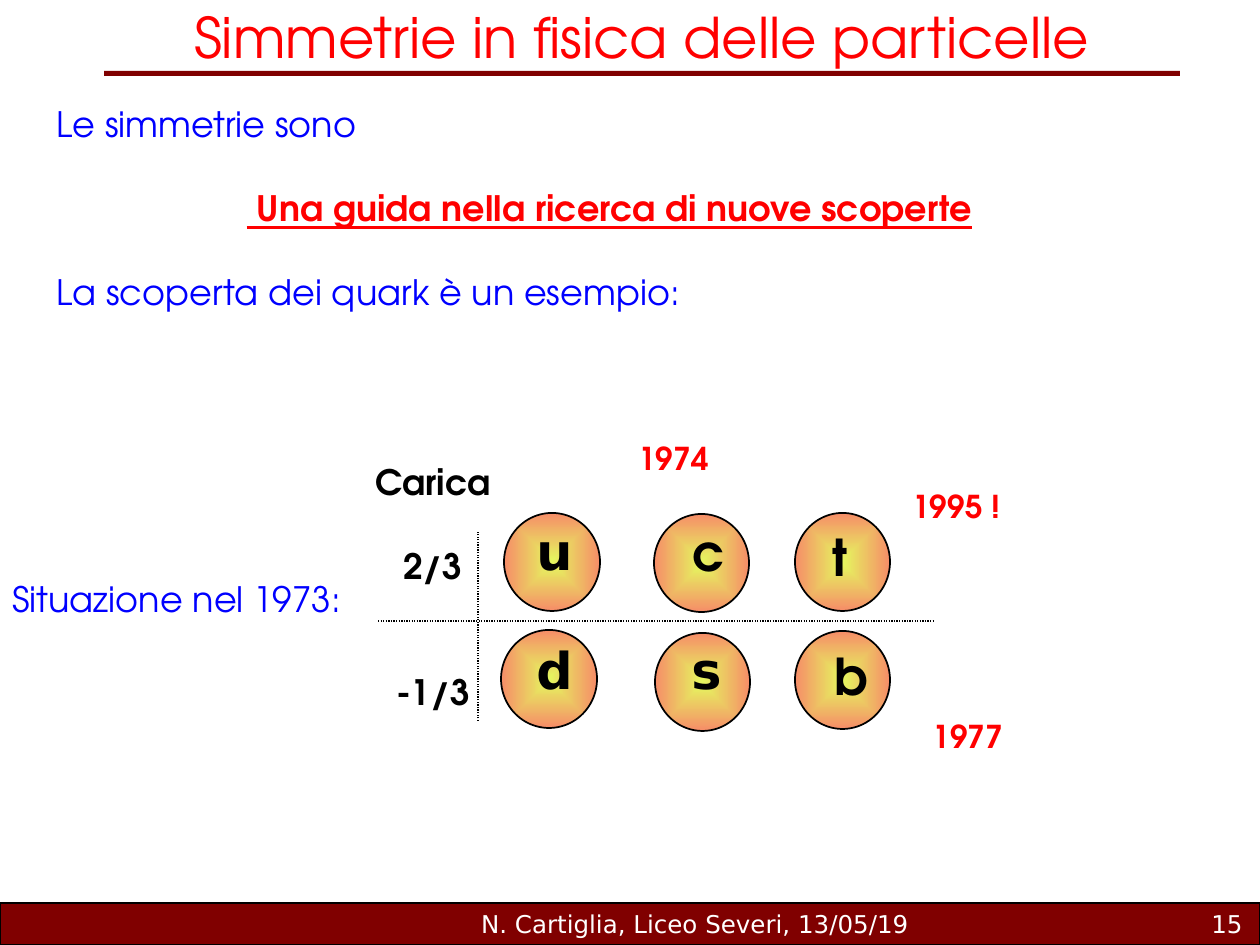
from dataclasses import dataclass
from typing import NamedTuple

from lxml import etree
from pptx import Presentation
from pptx.dml.color import RGBColor
from pptx.enum.dml import MSO_LINE_DASH_STYLE as Dash
from pptx.enum.shapes import MSO_CONNECTOR as Connector, MSO_SHAPE as Shape
from pptx.enum.text import MSO_ANCHOR as Anchor, PP_ALIGN as Align
from pptx.oxml.ns import qn
from pptx.util import Emu, Pt

PX_PER_INCH = 126


@dataclass(frozen=True)
class Theme:
    sans: str = "DejaVu Sans"
    geometric: str = "TeX Gyre Adventor"
    black: str = "000000"
    white: str = "FFFFFF"
    red: str = "FF0000"
    blue: str = "0000FF"
    maroon: str = "800000"
    glow: str = "E5F75F"
    rim: str = "F68D68"
    title: int = 32
    quark: int = 29
    body: int = 20
    year: int = 18
    footer: int = 14


THEME = Theme()


class Box(NamedTuple):
    left: int
    top: int
    width: int
    height: int


class Style(NamedTuple):
    size: int
    color: str
    font: str = THEME.geometric
    bold: bool = False
    underline: bool = False


class Line(NamedTuple):
    text: str
    style: Style
    align: Align = Align.LEFT
    before: int = 0  # points
    indent: int = 0  # px


class Quark(NamedTuple):
    name: str
    disc: Box
    label: Box
    font: str


class Year(NamedTuple):
    text: str
    box: Box


def px(value: int) -> Emu:
    return Emu(round(value * 914400 / PX_PER_INCH))


def rgb(value: str) -> RGBColor:
    return RGBColor.from_string(value)


def add_text(page, box: Box, lines: list[Line], wrap: bool = True) -> None:
    frame = page.shapes.add_textbox(*map(px, box)).text_frame
    frame.word_wrap = wrap
    frame.vertical_anchor = Anchor.TOP
    for index, line in enumerate(lines):
        para = frame.add_paragraph() if index else frame.paragraphs[0]
        para.alignment = line.align
        if line.before:
            para.space_before = Pt(line.before)
        if line.indent:
            para._p.get_or_add_pPr().set("marL", str(px(line.indent)))
        span = para.add_run()
        span.text = line.text
        font = span.font
        font.name, font.size = line.style.font, Pt(line.style.size)
        font.bold, font.underline = line.style.bold, line.style.underline
        font.color.rgb = rgb(line.style.color)


def add_bar(page, box: Box, outlined: bool) -> None:
    bar = page.shapes.add_shape(Shape.RECTANGLE, *map(px, box))
    bar.shadow.inherit = False
    bar.fill.solid()
    bar.fill.fore_color.rgb = rgb(THEME.maroon)
    if outlined:
        bar.line.color.rgb = rgb(THEME.black)
        bar.line.width = Pt(0.75)
    else:
        bar.line.fill.background()


def add_radial_fill(shape, inner: str, outer: str) -> None:
    shape.fill.background()
    old = shape._element.spPr.find(qn("a:noFill"))
    gradient = etree.Element(qn("a:gradFill"), rotWithShape="1")
    stops = etree.SubElement(gradient, qn("a:gsLst"))
    for position, color in (("0", inner), ("100000", outer)):
        stop = etree.SubElement(stops, qn("a:gs"), pos=position)
        etree.SubElement(stop, qn("a:srgbClr"), val=color)
    way = etree.SubElement(gradient, qn("a:path"))
    way.set("path", "shape")
    etree.SubElement(way, qn("a:fillToRect"), dict.fromkeys("ltrb", "50000"))
    old.getparent().replace(old, gradient)


def add_quark(page, quark: Quark) -> None:
    disc = page.shapes.add_shape(Shape.OVAL, *map(px, quark.disc))
    disc.shadow.inherit = False
    add_radial_fill(disc, THEME.glow, THEME.rim)
    disc.line.color.rgb = rgb(THEME.black)
    disc.line.width = Pt(1)
    style = Style(THEME.quark, THEME.black, quark.font, bold=True)
    add_text(page, quark.label, [Line(quark.name, style)], wrap=False)


def add_dotted_line(page, start: tuple[int, int], end: tuple[int, int]) -> None:
    line = page.shapes.add_connector(Connector.STRAIGHT, *map(px, start + end))
    line.line.color.rgb = rgb(THEME.black)
    line.line.width = Pt(0.75)
    line.line.dash_style = Dash.ROUND_DOT
    etree.SubElement(line._element.spPr, qn("a:effectLst"))


TITLE = Style(THEME.title, THEME.red)
BODY = Style(THEME.body, THEME.blue)
KEY = Style(THEME.body, THEME.red, bold=True, underline=True)
CHARGE = Style(THEME.body, THEME.black, bold=True)
YEAR = Style(THEME.year, THEME.red, bold=True)
FOOTER = Style(THEME.footer, THEME.white, THEME.sans)

QUARKS = [
    Quark("s", Box(655, 633, 95, 98), Box(679, 633, 53, 72), THEME.sans),
    Quark("u", Box(504, 513, 96, 98), Box(524, 514, 59, 72), THEME.sans),
    Quark("d", Box(501, 630, 96, 98), Box(524, 633, 59, 72), THEME.sans),
    Quark("t", Box(795, 513, 95, 98), Box(820, 520, 39, 73), THEME.geometric),
    Quark("c", Box(654, 514, 95, 98), Box(680, 515, 55, 73), THEME.geometric),
    Quark("b", Box(795, 631, 95, 98), Box(822, 639, 57, 73), THEME.geometric),
]
YEARS = [
    Year("1995 !", Box(900, 481, 115, 50)),
    Year("1974", Box(626, 433, 97, 50)),
    Year("1977", Box(920, 711, 97, 50)),
]


def main() -> None:
    deck = Presentation()
    deck.slide_width, deck.slide_height = px(1260), px(945)
    page = deck.slides.add_slide(deck.slide_layouts[6])

    # Footer and title
    add_bar(page, Box(0, 903, 1260, 42), outlined=True)
    add_bar(page, Box(104, 71, 1076, 5), outlined=False)
    add_text(page, Box(441, 903, 508, 42),
             [Line("N. Cartiglia, Liceo Severi, 13/05/19", FOOTER, Align.CENTER)])
    add_text(page, Box(993, 903, 262, 42), [Line("15", FOOTER, Align.RIGHT)])
    add_text(page, Box(44, -4, 1196, 81),
             [Line("Simmetrie in fisica delle particelle", TITLE, Align.CENTER)])

    # Introduction
    add_text(page, Box(44, 96, 1121, 352), [
        Line("Le simmetrie sono", BODY),
        Line(" Una guida nella ricerca di nuove scoperte", KEY, Align.CENTER, 24, 10),
        Line("La scoperta dei quark è un esempio:", BODY, before=24),
    ])
    add_text(page, Box(0, 571, 378, 55), [Line("Situazione nel 1973:", BODY)])

    # Quark families and their discovery years
    for quark in QUARKS:
        add_quark(page, quark)
    for year in YEARS:
        add_text(page, year.box, [Line(year.text, YEAR)], wrap=False)

    # Charge column and dotted axes
    add_text(page, Box(362, 454, 142, 267), [
        Line("Carica", CHARGE, Align.CENTER),
        Line("2/3", CHARGE, Align.CENTER, 24),
        Line("-1/3", CHARGE, Align.CENTER, 48),
    ], wrap=False)
    add_dotted_line(page, (378, 621), (934, 621))
    add_dotted_line(page, (478, 721), (478, 532))

    deck.save("out.pptx")


if __name__ == "__main__":
    main()
